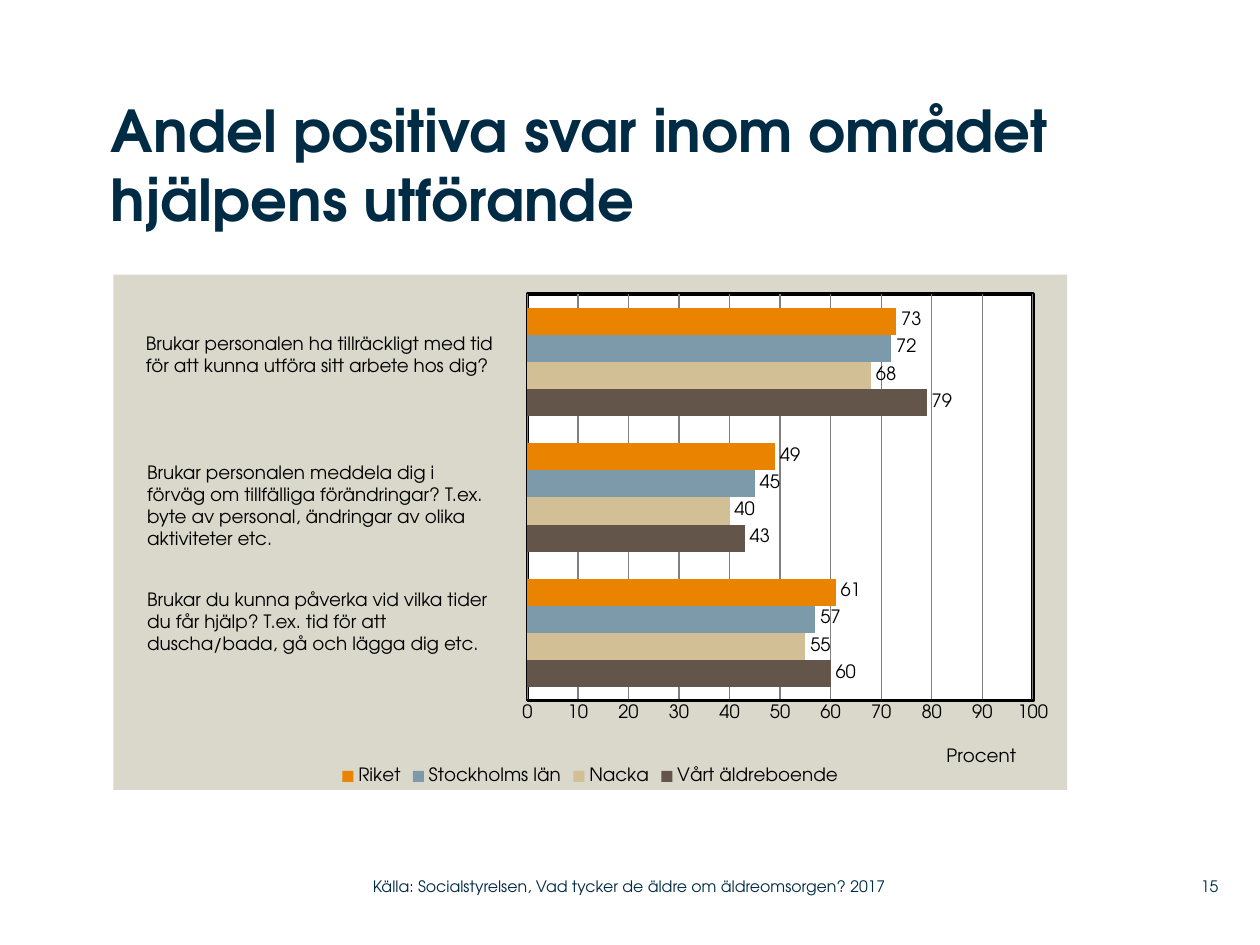
from lxml.etree import SubElement
from pptx import Presentation
from pptx.chart.data import CategoryChartData
from pptx.dml.color import RGBColor
from pptx.enum.chart import (XL_CHART_TYPE, XL_LABEL_POSITION,
                             XL_LEGEND_POSITION, XL_TICK_MARK)
from pptx.enum.text import MSO_ANCHOR, PP_ALIGN
from pptx.oxml import parse_xml
from pptx.oxml.ns import nsdecls, qn
from pptx.util import Inches, Pt

FONT = "TeX Gyre Adventor"
NAVY = RGBColor(0x00, 0x2B, 0x45)
BLACK = RGBColor(0, 0, 0)
GREY = RGBColor(0x80, 0x80, 0x80)

TITLE = "Andel positiva svar inom området hjälpens utförande"
SOURCE = "Källa: Socialstyrelsen, Vad tycker de äldre om äldreomsorgen? 2017"
PAGE = "15"
QUESTIONS = [
    ((1.06, 2.59, 2.99, 0.45),
     ["Brukar personalen ha tillräckligt med tid",
      "för att kunna utföra sitt arbete hos dig?"]),
    ((1.07, 3.61, 2.97, 0.81),
     ["Brukar personalen meddela dig i förväg om tillfälliga förändringar? "
      "T.ex. byte av personal, ändringar av olika aktiviteter etc."]),
    ((1.07, 4.62, 2.97, 0.63),
     ["Brukar du kunna påverka vid vilka tider",
      "du får hjälp? T.ex. tid för att",
      "duscha/bada, gå och lägga dig etc."]),
]
SERIES = [
    ("Vårt äldreboende", (60, 43, 79), RGBColor(0x63, 0x55, 0x49)),
    ("Nacka", (55, 40, 68), RGBColor(0xD3, 0xBF, 0x96)),
    ("Stockholms län", (57, 45, 72), RGBColor(0x7D, 0x9A, 0xAA)),
    ("Riket", (61, 49, 73), RGBColor(0xE9, 0x83, 0x00)),
]


def style(font, size=10.5, color=BLACK, bold=False):
    font.name, font.size, font.bold = FONT, Pt(size), bold
    font.color.rgb = color


def write(shape, lines, align=PP_ALIGN.LEFT, anchor=MSO_ANCHOR.TOP,
          inset=True, **look):
    frame = shape.text_frame
    frame.word_wrap = True
    frame.vertical_anchor = anchor
    if not inset:
        frame.margin_left = frame.margin_right = 0
        frame.margin_top = frame.margin_bottom = 0
    for i, line in enumerate(lines):
        para = frame.add_paragraph() if i else frame.paragraphs[0]
        para.alignment = align
        run = para.add_run()
        run.text = line
        style(run.font, **look)


def add_text(slide, box, lines, **look):
    write(slide.shapes.add_textbox(*map(Inches, box)), lines, **look)


def layout(**values):
    """Return a manual chart layout; keys are its XML tags in order."""
    node = parse_xml(f"<c:layout {nsdecls('c')}/>")
    manual = SubElement(node, qn("c:manualLayout"))
    for tag, value in values.items():
        SubElement(manual, qn(f"c:{tag}")).set("val", str(value))
    return node


def fill(color, line="<a:noFill/>", width=0):
    return parse_xml(
        f'<c:spPr {nsdecls("c", "a")}><a:solidFill><a:srgbClr val="{color}"/>'
        f'</a:solidFill><a:ln w="{Pt(width)}">{line}</a:ln></c:spPr>')


def add_bars(slide):
    data = CategoryChartData()
    data.categories = ["1", "2", "3"]
    for name, values, _ in SERIES:
        data.add_series(name, values)
    box = map(Inches, (0.9, 2.18, 7.57, 4.09))
    chart = slide.shapes.add_chart(
        XL_CHART_TYPE.BAR_CLUSTERED, *box, data).chart
    style(chart.font)
    chart.has_title = False
    chart.has_legend = True
    chart.legend.position = XL_LEGEND_POSITION.BOTTOM
    chart.legend.include_in_layout = False
    style(chart.legend.font)

    plot = chart.plots[0]
    plot.gap_width, plot.overlap = 100, 0
    plot.vary_by_categories = False
    for bars, (_, _, color) in zip(plot.series, SERIES):
        bars.format.fill.solid()
        bars.format.fill.fore_color.rgb = color
        labels = bars.data_labels
        labels.show_value = True
        labels.position = XL_LABEL_POSITION.OUTSIDE_END
        style(labels.font)

    chart.category_axis.visible = False
    axis = chart.value_axis
    axis.minimum_scale, axis.maximum_scale, axis.major_unit = 0, 100, 10
    axis.major_tick_mark = axis.minor_tick_mark = XL_TICK_MARK.NONE
    axis.format.line.color.rgb = BLACK
    axis.format.line.width = Pt(2)
    grid = axis.major_gridlines.format.line
    grid.color.rgb, grid.width = GREY, Pt(0.75)
    style(axis.tick_labels.font)

    para = axis.axis_title.text_frame.paragraphs[0]
    run = para.add_run()
    run.text = "Procent"
    style(run.font)
    title = axis.axis_title._element
    for old in title.findall(qn("c:layout")):
        title.remove(old)
    title.find(qn("c:tx")).addnext(
        layout(xMode="edge", yMode="edge", x=0.87, y=0.91))

    root = chart._chartSpace
    body = root.find(qn("c:chart"))
    area = body.find(qn("c:plotArea"))
    for old in area.findall(qn("c:layout")):
        area.remove(old)
    area.insert(0, layout(layoutTarget="inner", xMode="edge", yMode="edge",
                          x=0.434, y=0.038, w=0.53, h=0.789))
    edge = '<a:solidFill><a:srgbClr val="000000"/></a:solidFill>'
    area.append(fill("FFFFFF", edge, 2))
    body.addnext(fill("DAD7CB"))


def main():
    deck = Presentation()
    deck.slide_width, deck.slide_height = Inches(10), Inches(7.5)
    slide = deck.slides.add_slide(deck.slide_layouts[5])
    add_bars(slide)
    title = slide.shapes.title
    title.left, title.top = Inches(0.88), Inches(0.75)
    title.width, title.height = Inches(7.6), Inches(1.42)
    write(title, [TITLE], inset=False, size=33, color=NAVY, bold=True)
    for box, lines in QUESTIONS:
        add_text(slide, box, lines)
    small = dict(anchor=MSO_ANCHOR.MIDDLE, inset=False, size=9, color=NAVY)
    add_text(slide, (9.2, 6.89, 0.47, 0.29), [PAGE],
             align=PP_ALIGN.RIGHT, **small)
    add_text(slide, (2.96, 6.89, 4.43, 0.29), [SOURCE], **small)
    deck.save("out.pptx")


if __name__ == "__main__":
    main()
